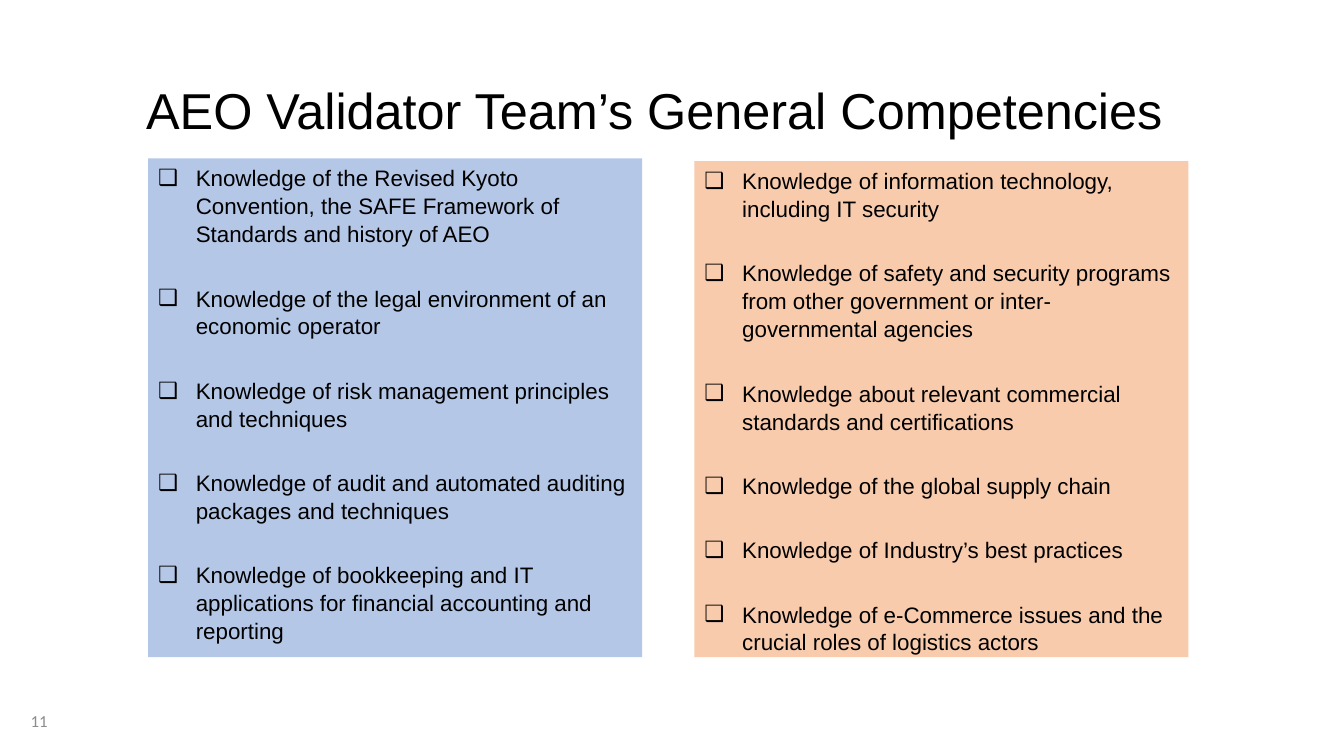
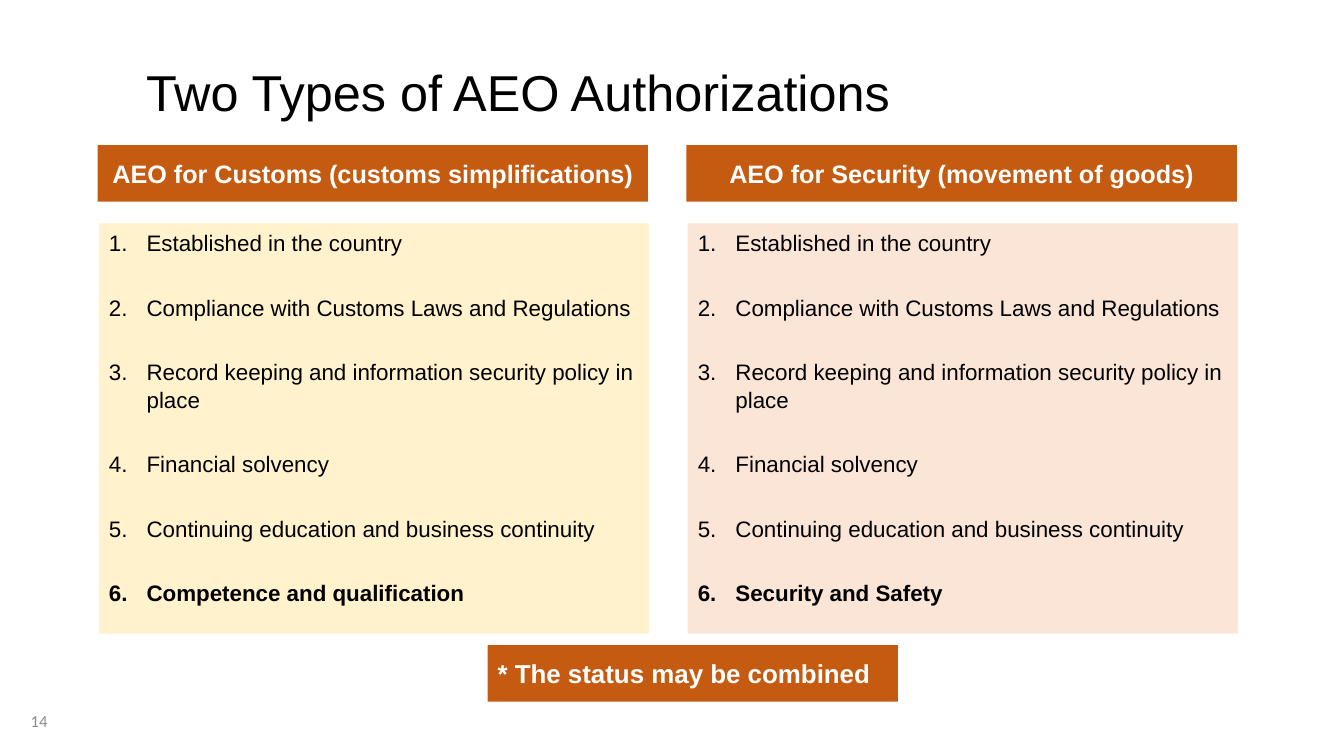
from dataclasses import dataclass
from typing import Optional

import pptx
import pptx.dml.color
import pptx.enum.shapes
import pptx.enum.text
import pptx.oxml.ns
import pptx.util
from lxml import etree

Cm, Pt = pptx.util.Cm, pptx.util.Pt
RGBColor = pptx.dml.color.RGBColor
ALIGN = pptx.enum.text.PP_ALIGN
ANCHOR = pptx.enum.text.MSO_ANCHOR

BLACK = RGBColor(0x00, 0x00, 0x00)
WHITE = RGBColor(0xFF, 0xFF, 0xFF)
GREY = RGBColor(0x8C, 0x8C, 0x8C)
BLUE = RGBColor(0xB4, 0xC7, 0xE7)
PEACH = RGBColor(0xF8, 0xCB, 0xAD)
CREAM = RGBColor(0xFF, 0xF2, 0xCC)
PINK = RGBColor(0xFB, 0xE5, 0xD6)
RUST = RGBColor(0xC5, 0x5A, 0x11)

TWO_CONTENT = 3
LIST_INDENT = Cm(0.95)
LIST_GAP = Pt(26)
CHECKBOX = "❑"


@dataclass
class Box:
    """Place on the slide, in centimetres."""
    left: float
    top: float
    width: float
    height: float


@dataclass
class Panel:
    box: Box
    fill: RGBColor
    items: list[str]
    bullet: Optional[str] = None  # None numbers the items
    bold_last: bool = False


@dataclass
class Banner:
    box: Box
    text: str
    size: float = 18
    align: ALIGN = ALIGN.CENTER


def place(sp, box: Box) -> None:
    sp.left, sp.top = Cm(box.left), Cm(box.top)
    sp.width, sp.height = Cm(box.width), Cm(box.height)


def fill_solid(sp, color: RGBColor) -> None:
    sp.fill.solid()
    sp.fill.fore_color.rgb = color


def write(p, text: str, *, size: float, color: RGBColor = BLACK, font: str = "Arial",
          bold: bool = False, align: ALIGN = ALIGN.LEFT, spacing: float = 1.0,
          before: int = 0) -> None:
    p.alignment, p.line_spacing, p.space_before = align, spacing, before
    r = p.add_run()
    r.text = text
    r.font.name, r.font.size, r.font.bold = font, Pt(size), bold
    r.font.color.rgb = color


def add_bullet(p, char: Optional[str]) -> None:
    """Give a paragraph a hanging bullet, or a number if there is no character."""
    qn = pptx.oxml.ns.qn
    pPr = p._p.get_or_add_pPr()
    pPr.set("marL", str(LIST_INDENT))
    pPr.set("indent", str(-LIST_INDENT))
    etree.SubElement(pPr, qn("a:buFont")).set("typeface", "Arial")
    if char:
        etree.SubElement(pPr, qn("a:buChar")).set("char", char)
    else:
        etree.SubElement(pPr, qn("a:buAutoNum")).set("type", "arabicPeriod")


def set_frame(sp, anchor: ANCHOR):
    tf = sp.text_frame
    tf.word_wrap = True
    tf.auto_size = pptx.enum.text.MSO_AUTO_SIZE.NONE
    tf.vertical_anchor = anchor
    return tf


def fill_panel(sp, panel: Panel) -> None:
    place(sp, panel.box)
    fill_solid(sp, panel.fill)
    tf = set_frame(sp, ANCHOR.TOP)
    last = len(panel.items) - 1
    for i, item in enumerate(panel.items):
        p = tf.add_paragraph() if i else tf.paragraphs[0]
        add_bullet(p, panel.bullet)
        write(p, item, size=16, bold=panel.bold_last and i == last,
              spacing=1.04, before=LIST_GAP if i else 0)


def add_banner(slide, banner: Banner) -> None:
    b = banner.box
    sp = slide.shapes.add_shape(pptx.enum.shapes.MSO_SHAPE.RECTANGLE,
                                Cm(b.left), Cm(b.top), Cm(b.width), Cm(b.height))
    sp.shadow.inherit = False
    sp.line.fill.background()
    fill_solid(sp, RUST)
    write(set_frame(sp, ANCHOR.MIDDLE).paragraphs[0], banner.text, size=banner.size,
          color=WHITE, bold=True, align=banner.align)


def add_slide(prs, title: str, title_top: float, number: int, panels: list[Panel]):
    slide = prs.slides.add_slide(prs.slide_layouts[TWO_CONTENT])
    place(slide.shapes.title, Box(3.43, title_top, 27.64, 3.68))
    write(set_frame(slide.shapes.title, ANCHOR.MIDDLE).paragraphs[0], title,
          size=36, spacing=0.9)
    for i, panel in enumerate(panels, start=1):
        fill_panel(slide.placeholders[i], panel)
    sp = slide.shapes.add_textbox(Cm(0), Cm(17.65), Cm(1.45), Cm(1.02))
    write(set_frame(sp, ANCHOR.MIDDLE).paragraphs[0], str(number), size=12,
          color=GREY, font="Calibri", align=ALIGN.RIGHT)
    return slide


def add_competencies(prs) -> None:
    add_slide(prs, "AEO Validator Team’s General Competencies", 1.02, 11, [
        Panel(Box(3.73, 3.99, 12.45, 12.57), BLUE, [
            "Knowledge of the Revised Kyoto Convention, the SAFE Framework of "
            "Standards and history of AEO",
            "Knowledge of the legal environment of an economic operator",
            "Knowledge of risk management principles and techniques",
            "Knowledge of audit and automated auditing packages and techniques",
            "Knowledge of bookkeeping and IT applications for financial accounting "
            "and reporting",
        ], CHECKBOX),
        Panel(Box(17.5, 4.06, 12.45, 12.5), PEACH, [
            "Knowledge of information technology, including IT security",
            "Knowledge of safety and security programs from other government or "
            "inter- governmental agencies",
            "Knowledge about relevant commercial standards and certifications",
            "Knowledge of the global supply chain",
            "Knowledge of Industry’s best practices",
            "Knowledge of e-Commerce issues and the crucial roles of logistics actors",
        ], CHECKBOX),
    ])


def add_authorizations(prs) -> None:
    shared = [
        "Established in the country",
        "Compliance with Customs Laws and Regulations",
        "Record keeping and information security policy in place",
        "Financial solvency",
        "Continuing education and business continuity",
    ]
    columns = [
        (2.46, CREAM, "AEO for Customs (customs simplifications)",
         "Competence and qualification"),
        (17.3, PINK, "AEO for Security (movement of goods)", "Security and Safety"),
    ]
    slide = add_slide(prs, "Two Types of AEO Authorizations", 0.56, 14, [
        Panel(Box(left + 0.03, 5.63, 13.87, 10.34), fill, shared + [extra], bold_last=True)
        for left, fill, _, extra in columns
    ])
    for left, _, heading, _ in columns:
        add_banner(slide, Banner(Box(left, 3.66, 13.87, 1.42), heading))
    add_banner(slide, Banner(Box(12.29, 16.26, 10.34, 1.42),
                             "* The status may be combined", 18.5, ALIGN.LEFT))


def main() -> None:
    prs = pptx.Presentation()
    prs.slide_width, prs.slide_height = Cm(33.87), Cm(19.05)
    add_competencies(prs)
    add_authorizations(prs)
    prs.save("out.pptx")


if __name__ == "__main__":
    main()
